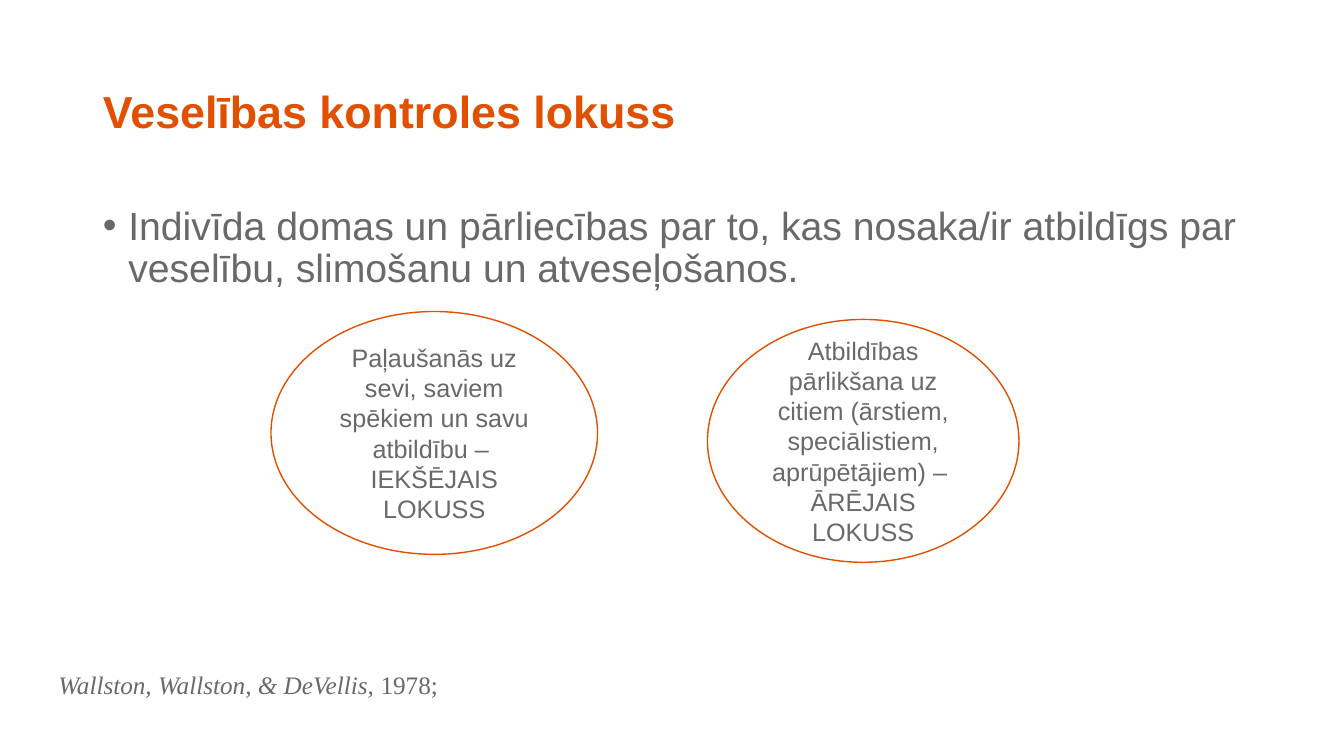
from lxml.etree import SubElement
from pptx import Presentation
from pptx.dml.color import RGBColor
from pptx.enum.shapes import MSO_SHAPE
from pptx.enum.text import MSO_ANCHOR, MSO_AUTO_SIZE, PP_ALIGN
from pptx.oxml.ns import qn
from pptx.util import Cm, Pt

ORANGE = RGBColor(0xE1, 0x4F, 0x01)
GREY = RGBColor(0x69, 0x69, 0x6B)
WHITE = RGBColor(0xFF, 0xFF, 0xFF)

TITLE = "Veselības kontroles lokuss"
DEFINITION = (
    "Indivīda domas un pārliecības par to, kas nosaka/ir atbildīgs par "
    "veselību, slimošanu un atveseļošanos."
)
CITATION = [("Wallston, Wallston, & DeVellis,", True), (" 1978;", False)]
LOCI = [
    (
        (6.83, 7.85, 8.23, 6.12),
        ["Paļaušanās uz sevi, saviem spēkiem un savu atbildību – ", "IEKŠĒJAIS LOKUSS"],
    ),
    (
        (17.83, 8.05, 7.85, 6.12),
        [
            "Atbildības pārlikšana uz citiem (ārstiem, speciālistiem, aprūpētājiem) – ",
            "ĀRĒJAIS",
            "LOKUSS",
        ],
    ),
]

TITLE_BOX = (2.34, 1.02, 29.21, 3.68)
BODY_BOX = (2.34, 5.08, 29.21, 12.09)
CITATION_BOX = (1.22, 16.74, 11.23, 1.02)


def place(shape, box):
    shape.left, shape.top, shape.width, shape.height = map(Cm, box)


def add_text(paragraph, text, size, color=GREY, name="Arial", bold=False, italic=False):
    run = paragraph.add_run()
    run.text = text
    run.font.name = name
    run.font.size = Pt(size)
    run.font.bold = bold
    run.font.italic = italic
    run.font.color.rgb = color


def fill_placeholder(shape, box, anchor, text, size, **style):
    place(shape, box)
    frame = shape.text_frame
    frame.auto_size = MSO_AUTO_SIZE.NONE
    frame.vertical_anchor = anchor
    paragraph = frame.paragraphs[0]
    paragraph.alignment = PP_ALIGN.LEFT
    paragraph.line_spacing = 0.9
    paragraph.space_before = Pt(0)
    add_text(paragraph, text, size, **style)
    return paragraph


def set_bullet(paragraph, indent):
    properties = paragraph._p.get_or_add_pPr()
    properties.set("marL", str(indent))
    properties.set("indent", str(-indent))
    SubElement(properties, qn("a:buFont")).set("typeface", "Arial")
    SubElement(properties, qn("a:buChar")).set("char", "•")


def add_locus(slide, box, lines):
    ellipse = slide.shapes.add_shape(MSO_SHAPE.OVAL, *map(Cm, box))
    ellipse.shadow.inherit = False
    ellipse.fill.solid()
    ellipse.fill.fore_color.rgb = WHITE
    ellipse.line.color.rgb = ORANGE
    ellipse.line.width = Pt(1)
    frame = ellipse.text_frame
    frame.word_wrap = True
    frame.vertical_anchor = MSO_ANCHOR.MIDDLE
    for index, line in enumerate(lines):
        paragraph = frame.add_paragraph() if index else frame.paragraphs[0]
        paragraph.alignment = PP_ALIGN.CENTER
        add_text(paragraph, line, 18)


def main():
    presentation = Presentation()
    presentation.slide_width = Cm(33.87)
    presentation.slide_height = Cm(19.05)
    slide = presentation.slides.add_slide(presentation.slide_layouts[1])

    fill_placeholder(
        slide.shapes.title, TITLE_BOX, MSO_ANCHOR.MIDDLE, TITLE, 32, color=ORANGE, bold=True
    )
    definition = fill_placeholder(
        slide.placeholders[1], BODY_BOX, MSO_ANCHOR.TOP, DEFINITION, 28
    )
    set_bullet(definition, Cm(0.64))

    citation = slide.shapes.add_textbox(*map(Cm, CITATION_BOX))
    citation.text_frame.word_wrap = True
    citation.text_frame.auto_size = MSO_AUTO_SIZE.SHAPE_TO_FIT_TEXT
    for text, italic in CITATION:
        add_text(
            citation.text_frame.paragraphs[0], text, 18, name="Times New Roman", italic=italic
        )

    for box, lines in LOCI:
        add_locus(slide, box, lines)

    presentation.save("out.pptx")


if __name__ == "__main__":
    main()
